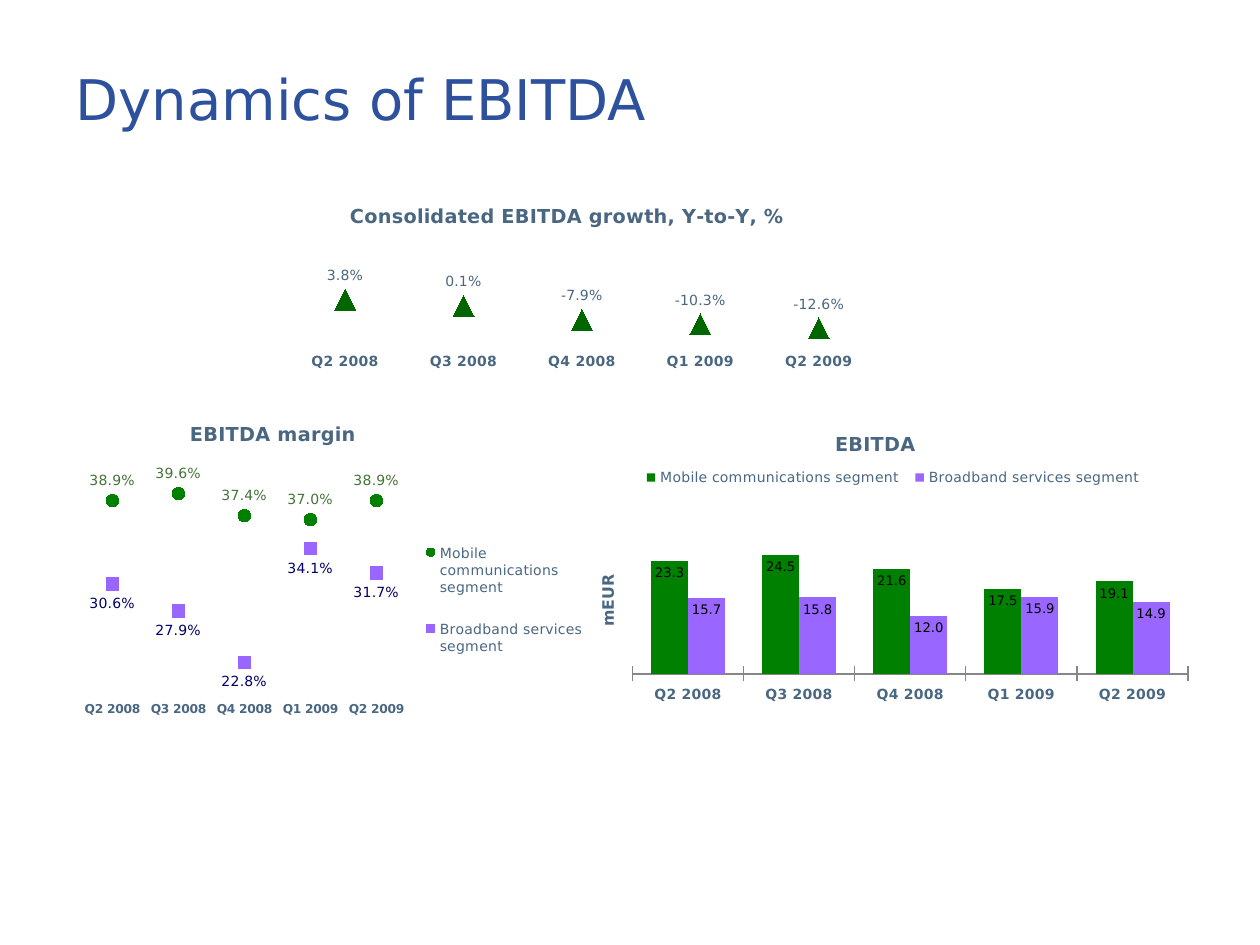
from lxml.etree import SubElement
from pptx import Presentation
from pptx.chart.data import CategoryChartData
from pptx.dml.color import RGBColor
from pptx.enum.chart import (XL_CHART_TYPE, XL_LABEL_POSITION, XL_LEGEND_POSITION,
                             XL_MARKER_STYLE, XL_TICK_LABEL_POSITION, XL_TICK_MARK)
from pptx.enum.text import MSO_ANCHOR, PP_ALIGN
from pptx.oxml import parse_xml
from pptx.oxml.ns import nsdecls, qn
from pptx.util import Inches, Pt

FONT = "DejaVu Sans"
SLATE, GREEN, PURPLE = "4A6782", "008000", "9966FF"
QUARTERS = ["Q2 2008", "Q3 2008", "Q4 2008", "Q1 2009", "Q2 2009"]
MOBILE, BROADBAND = "Mobile communications segment", "Broadband services segment"


def rgb(value):
    return RGBColor.from_string(value)


def set_values(target, values):
    for name, value in values.items():
        setattr(target, name, value)


def set_font(font, size, color=SLATE, bold=False, name=FONT):
    set_values(font, {"size": Pt(size), "bold": bold, "name": name})
    font.color.rgb = rgb(color)


def place(part, box, area, index=1, inner=False):
    """Fix a chart part at an area given in slide inches, inside the chart's box."""
    layout = part.find(qn("c:layout"))
    if layout is None:
        layout = parse_xml(f"<c:layout {nsdecls('c')}/>")
        part.insert(index, layout)
    for child in list(layout):
        layout.remove(child)
    manual = SubElement(layout, qn("c:manualLayout"))
    left, top, width, height = box
    fractions = [(area[0] - left) / width, (area[1] - top) / height]
    if len(area) == 4:
        fractions += [area[2] / width, area[3] / height]
    settings = [("layoutTarget", "inner")] if inner else []
    settings += [("xMode", "edge"), ("yMode", "edge")]
    settings += [(key, f"{value:.4f}") for key, value in zip("xywh", fractions)]
    for tag, value in settings:
        SubElement(manual, qn(f"c:{tag}")).set("val", value)


class SlideBuilder:
    def __init__(self, slide):
        self.slide = slide

    def title(self, text, box):
        holder = self.slide.shapes.title
        set_values(holder, dict(zip(("left", "top", "width", "height"), map(Inches, box))))
        frame = holder.text_frame
        frame.text = text
        frame.vertical_anchor = MSO_ANCHOR.MIDDLE
        frame.paragraphs[0].alignment = PP_ALIGN.LEFT
        set_font(frame.paragraphs[0].runs[0].font, 32, "2E519E")

    def chart(self, kind, box, series, number_format, heading, heading_at, plot_area,
              scale, category_size=8):
        data = CategoryChartData(number_format=number_format)
        data.categories = QUARTERS
        for name, values in series:
            data.add_series(name, values)
        chart = self.slide.shapes.add_chart(kind, *map(Inches, box), data).chart
        set_font(chart.font, 10, "000000", name="Roboto")
        chart.has_legend = False
        self.chart_title(chart.chart_title, heading, 11, box, heading_at)
        place(chart._chartSpace.chart.plotArea, box, plot_area, 0, inner=True)

        categories = chart.category_axis
        set_values(categories, {"major_tick_mark": XL_TICK_MARK.CROSS,
                                "has_major_gridlines": False})
        categories.tick_labels.font.size = Pt(category_size)
        set_font(categories.tick_labels.font, category_size, bold=True)
        set_values(chart.value_axis, {"visible": False, "has_major_gridlines": False, **scale})

        chart.plots[0].vary_by_categories = False
        return chart

    def chart_title(self, title, text, size, box, position):
        title.text_frame.text = text
        set_font(title.text_frame.paragraphs[0].runs[0].font, size, bold=True)
        element = title._element
        place(element, box, position)
        element.find(qn("c:overlay")).set("val", "1")

    def legend(self, chart, position, box, area, overlay):
        chart.has_legend = True
        set_values(chart.legend, {"position": position, "include_in_layout": not overlay})
        set_font(chart.legend.font, 8)
        place(chart.legend._element, box, area)

    def labels(self, series, position, size, color, number_format):
        labels = series.data_labels
        set_values(labels, {"show_value": True, "position": position,
                            "number_format": number_format,
                            "number_format_is_linked": False})
        set_font(labels.font, size, color)

    def markers_only(self, chart, looks):
        chart.category_axis.format.line.fill.background()
        for series, (style, size, color, position, label_color) in zip(chart.plots[0].series, looks):
            series.smooth = False
            series.format.line.fill.background()
            set_values(series.marker, {"style": style, "size": size})
            for fill in (series.marker.format.fill, series.marker.format.line.fill):
                fill.solid()
                fill.fore_color.rgb = rgb(color)
            self.labels(series, position, 8, label_color, "0.0%")


def main():
    prs = Presentation()
    set_values(prs, {"slide_width": Inches(10), "slide_height": Inches(7.5)})
    builder = SlideBuilder(prs.slides.add_slide(prs.slide_layouts[5]))
    builder.title("Dynamics of EBITDA", (0.5, 0.3, 6.78, 0.95))
    above, below = XL_LABEL_POSITION.ABOVE, XL_LABEL_POSITION.BELOW

    growth = builder.chart(
        XL_CHART_TYPE.LINE_MARKERS_STACKED, (2.11, 0.62, 5, 3),
        [("Series 1", (0.038, 0.001, -0.079, -0.103, -0.126))], "0.0%",
        "Consolidated EBITDA growth, Y-to-Y, %", (2.75, 1.58), (2.27, 0.77, 4.7, 1.94),
        {"minimum_scale": -0.2, "maximum_scale": 1.2, "major_unit": 0.5})
    growth.category_axis.tick_label_position = XL_TICK_LABEL_POSITION.LOW
    builder.markers_only(growth, [(XL_MARKER_STYLE.TRIANGLE, 12, "006600", above, SLATE)])

    margin_box = (0, 2.89, 5, 3)
    margin = builder.chart(
        XL_CHART_TYPE.LINE_MARKERS, margin_box,
        [(MOBILE, (0.389, 0.396, 0.374, 0.37, 0.389)),
         (BROADBAND, (0.306, 0.279, 0.228, 0.341, 0.317))], "0.0%",
        "EBITDA margin", (1.48, 3.31), (0.63, 3.09, 2.62, 2.39),
        {"minimum_scale": 0.2, "maximum_scale": 0.5, "major_unit": 0.01}, category_size=7)
    builder.markers_only(margin, [(XL_MARKER_STYLE.CIRCLE, 7, GREEN, above, "447339"),
                                  (XL_MARKER_STYLE.SQUARE, 7, PURPLE, below, "000066")])
    builder.legend(margin, XL_LEGEND_POSITION.RIGHT, margin_box, (3.38, 4.13, 1.25, 1.27), False)

    ebitda_box = (4.53, 2.58, 5, 3.07)
    ebitda = builder.chart(
        XL_CHART_TYPE.COLUMN_CLUSTERED, ebitda_box,
        [(MOBILE, (23.3, 24.5, 21.6, 17.5, 19.1)),
         (BROADBAND, (15.7, 15.8, 12, 15.9, 14.9))], "0.0",
        "EBITDA", (6.6, 3.39), (5.02, 3.04, 4.41, 2.31),
        {"minimum_scale": 0, "maximum_scale": 60})
    ebitda.plots[0].gap_width = 100
    ebitda.category_axis.format.line.color.rgb = rgb("868686")
    for series, color in zip(ebitda.plots[0].series, (GREEN, PURPLE)):
        series.format.fill.solid()
        series.format.fill.fore_color.rgb = rgb(color)
        builder.labels(series, XL_LABEL_POSITION.INSIDE_END, 7.5, "000000", "0.0")
    unit = ebitda.value_axis.axis_title
    builder.chart_title(unit, "mEUR", 9, ebitda_box, (4.72, 4.54))
    unit.text_frame._txBody.bodyPr.set("rot", "-5400000")
    builder.legend(ebitda, XL_LEGEND_POSITION.CORNER, ebitda_box, (5.04, 3.68, 4.1, 0.22), True)

    prs.save("out.pptx")


if __name__ == "__main__":
    main()
